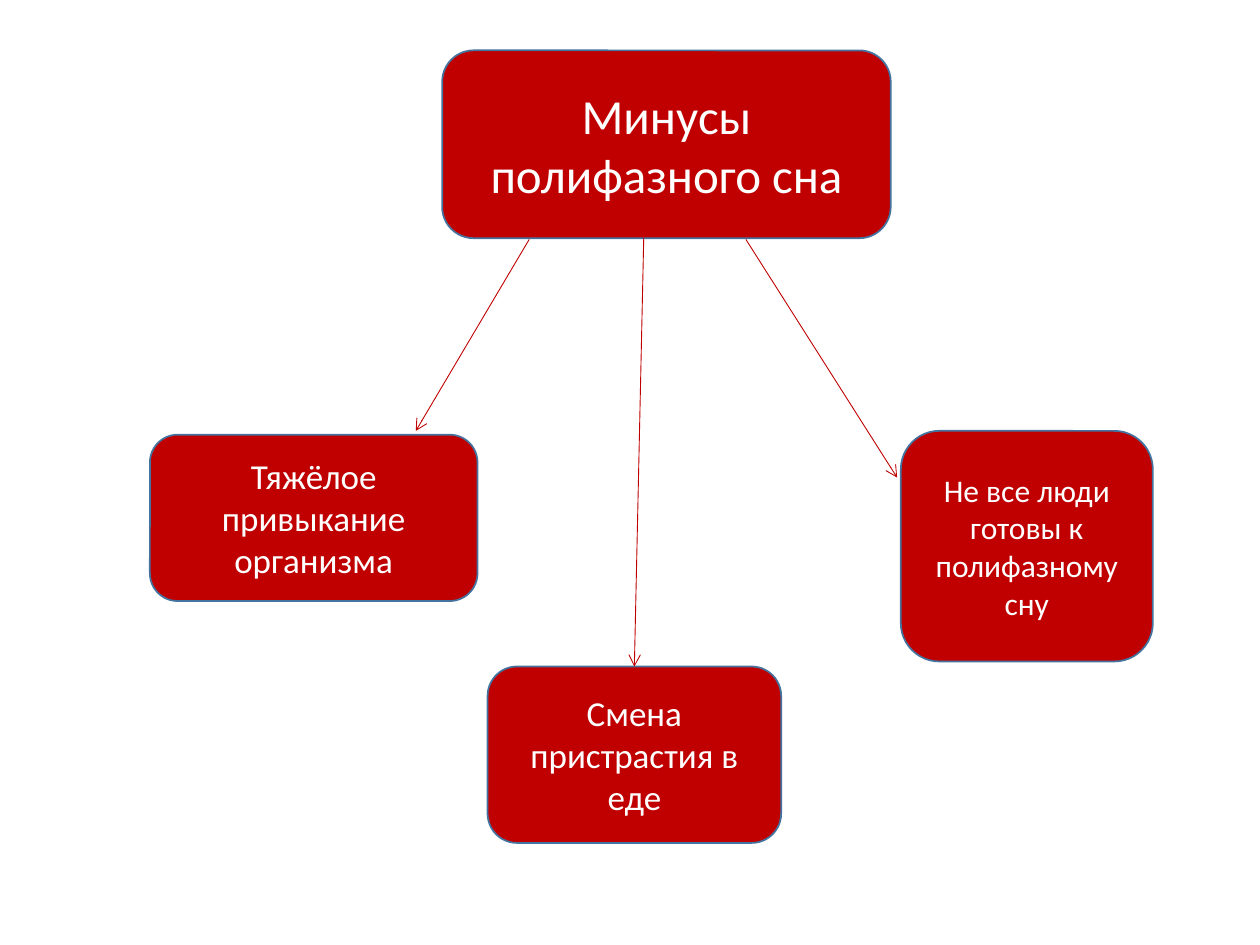
from typing import NamedTuple

from lxml import etree
from pptx import Presentation
from pptx.dml.color import RGBColor
from pptx.enum import shapes, text
from pptx.oxml.ns import qn
from pptx.util import Inches, Pt

# Grid: 100 columns by 75 rows, so one unit is a tenth of an inch
WIDTH, HEIGHT = Inches(10), Inches(7.5)
COLS, ROWS = 100, 75
RED, BLUE, WHITE = "C00000", "43739E", "FFFFFF"
TOP_SIDE = 0


class Box(NamedTuple):
    label: str
    col: float
    row: float
    cols: float
    rows: float
    size: int


class Arrow(NamedTuple):
    start: tuple[float, float]
    end: tuple[float, float]
    target: str = ""  # box whose top middle the arrow joins


HEADING = Box("Минусы полифазного сна", 35.1, 4, 35.6, 14.9, 28)
HABIT = Box("Тяжёлое привыкание организма", 11.9, 34.5, 26, 13.2, 20)
PEOPLE = Box("Не все люди готовы к полифазному сну", 71.5, 34.2, 20, 18.3, 18)
FOOD = Box("Смена пристрастия в еде", 38.7, 52.9, 23.3, 14, 20)

ARROWS = [
    Arrow((42, 19), (33, 34.2)),
    Arrow((59.2, 19), (71.2, 37.9)),
    Arrow((51.1, 18.5), (50.4, 52.9), FOOD.label),
]


def x(cols: float) -> int:
    return round(WIDTH * cols / COLS)


def y(rows: float) -> int:
    return round(HEIGHT * rows / ROWS)


def paint(fmt, color: str) -> None:
    fmt.solid()
    fmt.fore_color.rgb = RGBColor.from_string(color)


def draw_box(slide, box: Box):
    sp = slide.shapes.add_shape(
        shapes.MSO_SHAPE.ROUNDED_RECTANGLE,
        x(box.col), y(box.row), x(box.cols), y(box.rows))
    sp.shadow.inherit = False
    paint(sp.fill, RED)
    paint(sp.line.fill, BLUE)
    sp.line.width = Pt(1)

    tf = sp.text_frame
    tf.word_wrap = True
    tf.vertical_anchor = text.MSO_ANCHOR.MIDDLE
    p = tf.paragraphs[0]
    p.alignment = text.PP_ALIGN.CENTER
    r = p.add_run()
    r.text = box.label
    r.font.name = "Calibri"
    r.font.size = Pt(box.size)
    paint(r.font.fill, WHITE)
    return sp


def draw_arrow(slide, arrow: Arrow, boxes: dict) -> None:
    (x1, y1), (x2, y2) = arrow.start, arrow.end
    line = slide.shapes.add_connector(
        shapes.MSO_CONNECTOR.STRAIGHT, x(x1), y(y1), x(x2), y(y2))
    if arrow.target:
        line.end_connect(boxes[arrow.target], TOP_SIDE)
    paint(line.line.fill, RED)
    line.line.width = Pt(0.5)
    # Open arrowhead, no shadow
    etree.SubElement(line.line._get_or_add_ln(), qn("a:tailEnd"), type="arrow")
    etree.SubElement(line._element.spPr, qn("a:effectLst"))


def main() -> None:
    prs = Presentation()
    prs.slide_width, prs.slide_height = WIDTH, HEIGHT
    slide = prs.slides.add_slide(prs.slide_layouts.get_by_name("Blank"))

    # Heading and its three drawbacks
    boxes = {box.label: draw_box(slide, box)
             for box in (HABIT, HEADING, PEOPLE, FOOD)}

    # Arrows from the heading
    for arrow in ARROWS:
        draw_arrow(slide, arrow, boxes)

    prs.save("out.pptx")


if __name__ == "__main__":
    main()
